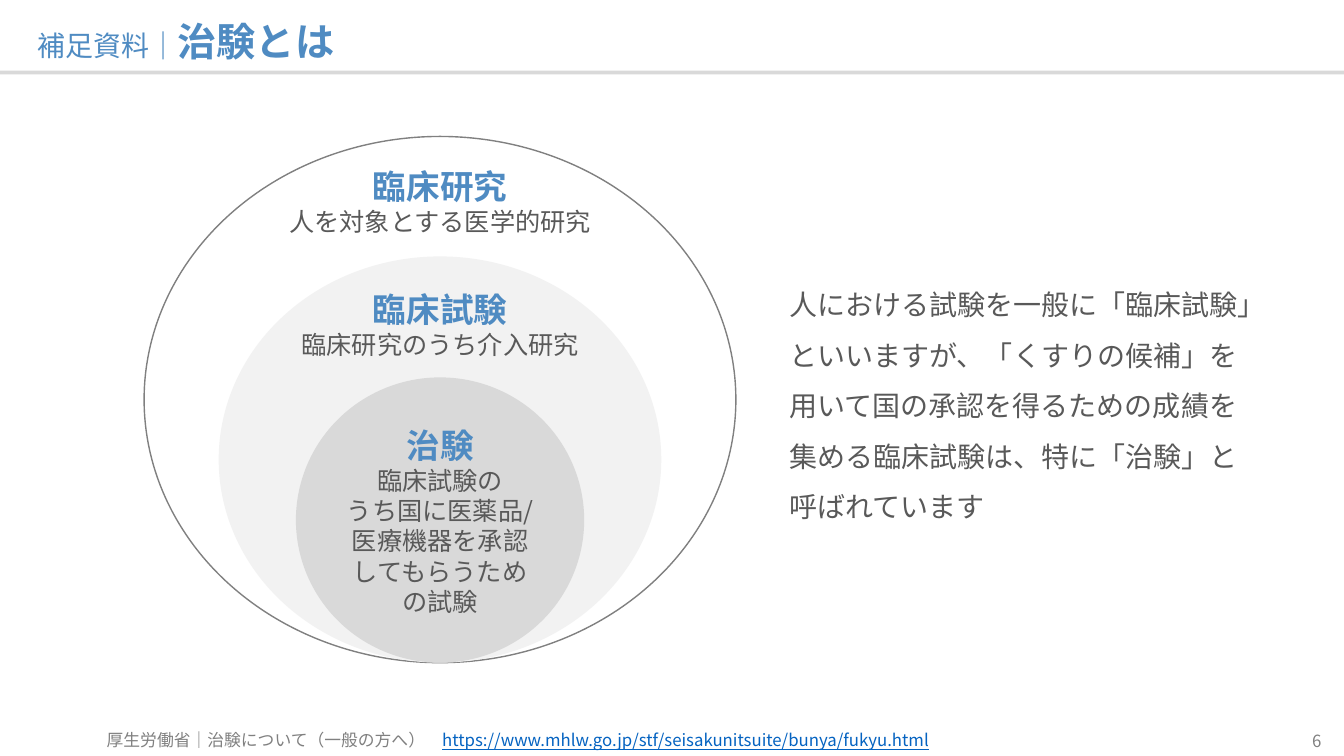
from dataclasses import dataclass

from lxml.etree import SubElement
from pptx import Presentation
from pptx.dml.color import RGBColor
from pptx.enum.shapes import MSO_SHAPE
from pptx.enum.text import MSO_ANCHOR, PP_ALIGN
from pptx.oxml.ns import qn
from pptx.util import Inches, Pt

FONT = "Noto Sans CJK JP"
BLUE, TEXT, MUTED, LINK = "4F8BC2", "595959", "808080", "0563C1"
WHITE, PALE, GREY = "FFFFFF", "F2F2F2", "D9D9D9"
SLIDE_WIDTH, SLIDE_HEIGHT = Inches(13.33), Inches(7.5)
CENTER, BOTTOM = 32.74, 87.65  # shared by the nested circles


@dataclass
class Box:
    """Left, top, width and height in percent of the slide's size."""
    left: float
    top: float
    width: float
    height: float

    def emu(self) -> tuple[int, int, int, int]:
        return (round(SLIDE_WIDTH * self.left / 100), round(SLIDE_HEIGHT * self.top / 100),
                round(SLIDE_WIDTH * self.width / 100), round(SLIDE_HEIGHT * self.height / 100))


@dataclass
class Run:
    text: str
    size: int
    color: str
    bold: bool = False
    underline: bool = False


@dataclass
class Level:
    """One circle of the diagram with its caption."""
    width: float
    height: float
    fill: str
    outline: str | None
    caption_middle: float
    caption_width: float
    caption_height: float
    term: str
    meaning: list[str]


LEVELS = [
    Level(44.03, 69.6, WHITE, MUTED, 26.67, 31.73, 14.93,
          "臨床研究", ["人を対象とする医学的研究"]),
    Level(32.93, 53.73, PALE, None, 42.93, 29.55, 19.73,
          "臨床試験", ["臨床研究のうち介入研究"]),
    Level(21.45, 37.73, GREY, None, 68.87, 29.55, 20.4,
          "治験", ["臨床試験の", "うち国に医薬品/", "医療機器を承認", "してもらうため", "の試験"]),
]
EXPLANATION = [
    "人における試験を一般に「臨床試験」といいますが、「くすりの候補」を",
    "用いて国の承認を得るための成績を",
    "集める臨床試験は、特に「治験」と",
    "呼ばれています",
]


def rgb(color: str) -> RGBColor:
    return RGBColor.from_string(color)


def add_figure(shapes, kind: MSO_SHAPE, box: Box, fill: str, outline: str | None = None) -> None:
    figure = shapes.add_shape(kind, *box.emu())
    figure.shadow.inherit = False
    figure.fill.solid()
    figure.fill.fore_color.rgb = rgb(fill)
    if outline:
        figure.line.color.rgb = rgb(outline)
        figure.line.width = Pt(1)
    else:
        figure.line.fill.background()


def add_run(paragraph, run: Run) -> None:
    """Add a run, turning its newlines into line breaks."""
    for index, line in enumerate(run.text.split("\n")):
        if index:
            paragraph.add_line_break()
        piece = paragraph.add_run()
        piece.text = line
        font = piece.font
        font.name, font.size, font.bold = FONT, Pt(run.size), run.bold
        font.underline = run.underline
        font.color.rgb = rgb(run.color)
        SubElement(piece._r.get_or_add_rPr(), qn("a:ea"), typeface=FONT)


def add_text(shapes, box: Box, paragraphs: list[list[Run]], anchor: MSO_ANCHOR,
             align: PP_ALIGN = PP_ALIGN.LEFT, spacing: float = 1.0,
             before: int = 0, inset: bool = True) -> None:
    frame = shapes.add_textbox(*box.emu()).text_frame
    frame.word_wrap = True
    frame.vertical_anchor = anchor
    if not inset:
        frame.margin_left = frame.margin_top = frame.margin_right = frame.margin_bottom = 0
    for index, runs in enumerate(paragraphs):
        paragraph = frame.add_paragraph() if index else frame.paragraphs[0]
        paragraph.alignment = align
        paragraph.line_spacing = spacing
        paragraph.space_before = Pt(before)
        for run in runs:
            add_run(paragraph, run)


def add_diagram(shapes) -> None:
    for level in LEVELS:
        circle = Box(CENTER - level.width / 2, BOTTOM - level.height, level.width, level.height)
        add_figure(shapes, MSO_SHAPE.OVAL, circle, level.fill, level.outline)
    for level in LEVELS:
        caption = Box(CENTER - level.caption_width / 2,
                      level.caption_middle - level.caption_height / 2,
                      level.caption_width, level.caption_height)
        lines = [[Run(level.term, 24, BLUE, bold=True)]]
        lines += [[Run(line, 18, TEXT)] for line in level.meaning]
        add_text(shapes, caption, lines, MSO_ANCHOR.MIDDLE, PP_ALIGN.CENTER)


def main() -> None:
    presentation = Presentation()
    presentation.slide_width, presentation.slide_height = SLIDE_WIDTH, SLIDE_HEIGHT
    shapes = presentation.slides.add_slide(presentation.slide_layouts[6]).shapes

    add_figure(shapes, MSO_SHAPE.RECTANGLE, Box(0, 9.33, 100, 0.53), GREY)
    add_text(shapes, Box(2.78, 2.27, 94.52, 5.73),
             [[Run("補足資料｜", 20, BLUE), Run("治験とは", 28, BLUE, bold=True)]],
             MSO_ANCHOR.MIDDLE, spacing=1.1, inset=False)
    add_diagram(shapes.add_group_shape().shapes)
    add_text(shapes, Box(57.98, 35.2, 37.05, 35.2),
             [[Run("\n".join(EXPLANATION), 20, TEXT)]],
             MSO_ANCHOR.TOP, spacing=1.5, before=4)
    add_text(shapes, Box(7.2, 96, 85.65, 3.87),
             [[Run("厚生労働省｜治験について（一般の方へ）　", 12, MUTED),
               Run("https://www.mhlw.go.jp/stf/seisakunitsuite/bunya/fukyu.html", 12, LINK,
                   underline=True)]], MSO_ANCHOR.BOTTOM)
    add_text(shapes, Box(94.58, 96.13, 3.75, 3.73), [[Run("6", 12, MUTED)]],
             MSO_ANCHOR.MIDDLE, PP_ALIGN.RIGHT, inset=False)
    presentation.save("out.pptx")


if __name__ == "__main__":
    main()
